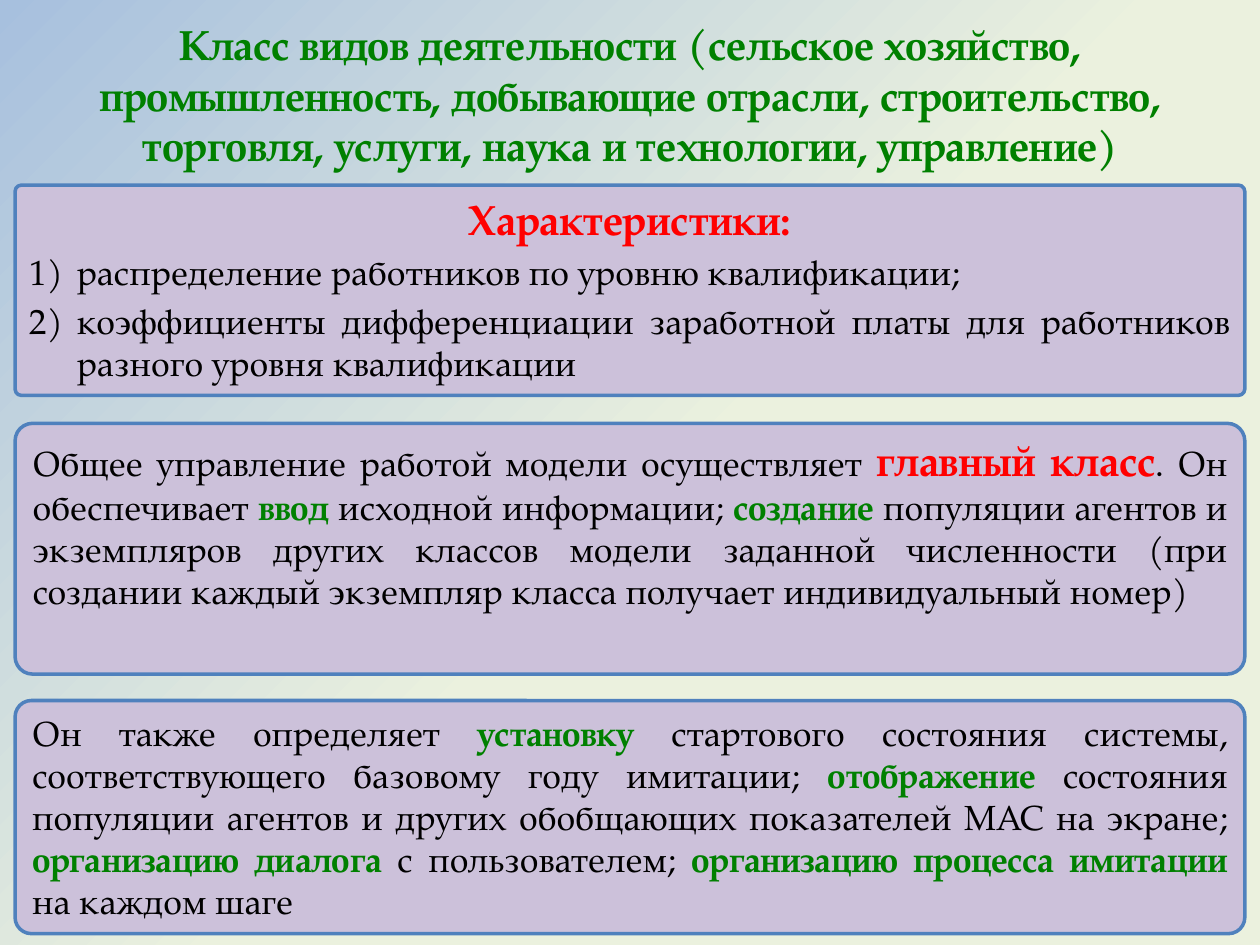
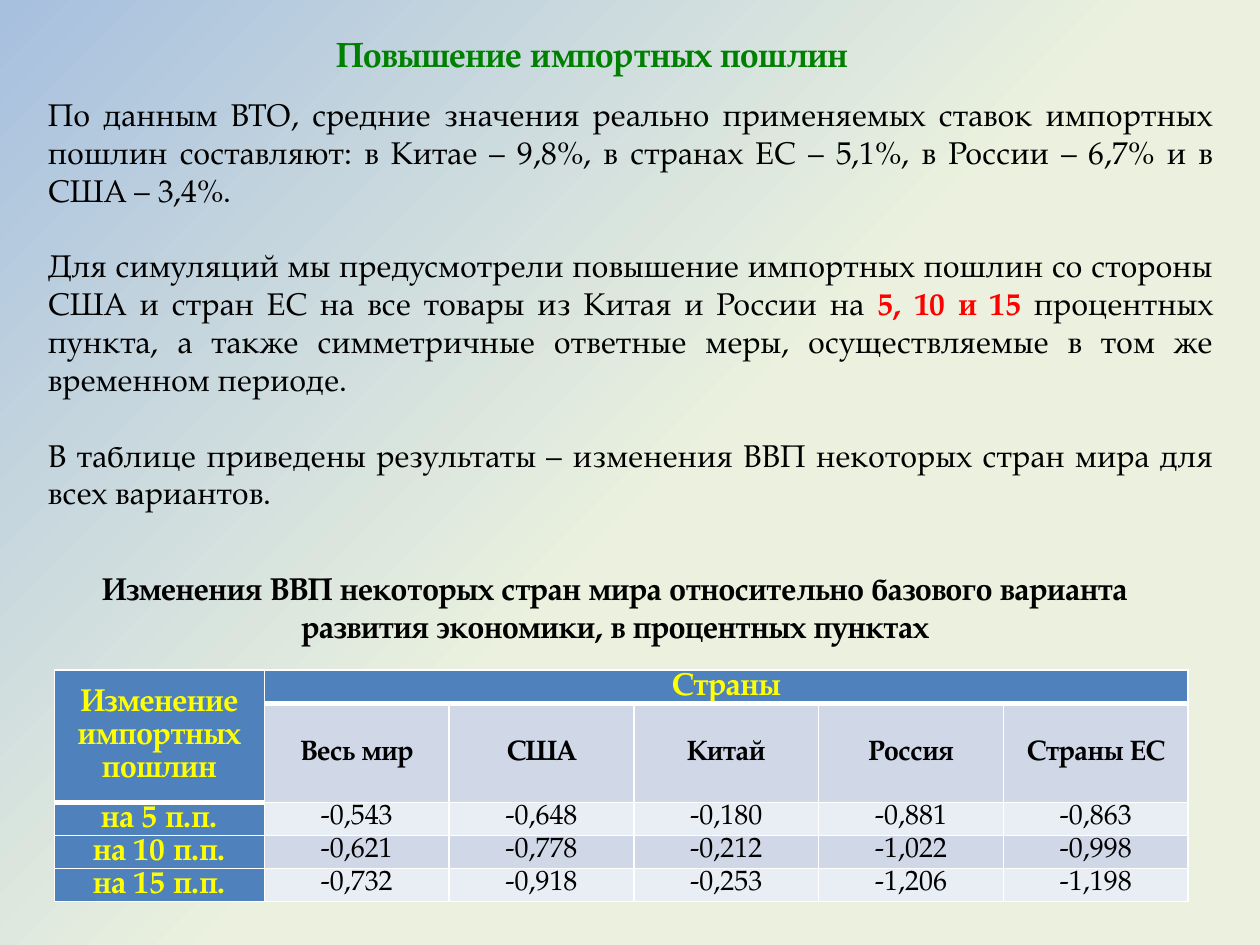
from dataclasses import dataclass
from typing import Optional

from lxml import etree
from pptx import Presentation
from pptx.dml.color import RGBColor
from pptx.enum import shapes, text
from pptx.oxml import ns
from pptx.util import Pt

FONT = "TeX Gyre Pagella"
COLORS = {
    "sky": "A7C0DE", "cream": "EBF1DE",
    "card": "CCC1DA", "blue": "4F81BD",
    "black": "000000", "red": "FF0000", "green": "008000",
    "yellow": "FFFF00", "white": "FFFFFF",
    "band_dark": "D0D8E8", "band_light": "E9EDF4",
}
LEFT, CENTER, JUSTIFY = text.PP_ALIGN.LEFT, text.PP_ALIGN.CENTER, text.PP_ALIGN.JUSTIFY
TOP, MIDDLE = text.MSO_ANCHOR.TOP, text.MSO_ANCHOR.MIDDLE


@dataclass(frozen=True)
class Box:
    left: float
    top: float
    width: float
    height: float


@dataclass(frozen=True)
class Span:
    text: str
    color: str = "black"
    size: float = 20
    bold: bool = False


@dataclass(frozen=True)
class Para:
    spans: list[Span]
    align: text.PP_ALIGN = JUSTIFY
    before: float = 0
    numbered: bool = False
    spacing: Optional[float] = None


def rgb(name: str) -> RGBColor:
    return RGBColor.from_string(COLORS[name])


def key(words: str, color: str = "green", size: float = 20) -> Span:
    return Span(words, color, size, True)


def place(shape, box: Box) -> None:
    shape.left, shape.top = Pt(box.left), Pt(box.top)
    shape.width, shape.height = Pt(box.width), Pt(box.height)


def write(frame, paras: list[Para], anchor=TOP, wrap: bool = True) -> None:
    """Fill a text frame with formatted paragraphs."""
    frame.word_wrap = wrap
    frame.auto_size = text.MSO_AUTO_SIZE.NONE
    frame.vertical_anchor = anchor
    write_paras(frame, paras)


def write_paras(frame, paras: list[Para]) -> None:
    for index, para in enumerate(paras):
        line = frame.paragraphs[0] if index == 0 else frame.add_paragraph()
        props = line._p.get_or_add_pPr()
        props.set("marL", str(Pt(27) if para.numbered else 0))
        props.set("indent", str(Pt(-27) if para.numbered else 0))
        if para.numbered:
            etree.SubElement(props, ns.qn("a:buAutoNum"), type="arabicParenR")
        else:
            etree.SubElement(props, ns.qn("a:buNone"))
        line.alignment = para.align
        line.space_before = Pt(para.before)
        if para.spacing:
            line.line_spacing = para.spacing
        for span in para.spans:
            run = line.add_run()
            run.text = span.text
            run.font.name, run.font.size = FONT, Pt(span.size)
            run.font.bold = span.bold
            run.font.color.rgb = rgb(span.color)


def paint_background(master) -> None:
    fill = master.background.fill
    fill.gradient()
    fill.gradient_angle = 315
    for stop, color, position in zip(fill.gradient_stops, ("sky", "cream"), (0, 0.53)):
        stop.color.rgb = rgb(color)
        stop.position = position
    sky = master.background._cSld.find(".//" + ns.qn("a:srgbClr"))
    etree.SubElement(sky, ns.qn("a:alpha"), val="72000")


def add_titled_slide(prs, title: str, box: Box, size: float, align, wrap: bool):
    slide = prs.slides.add_slide(prs.slide_layouts[1])
    place(slide.shapes.title, box)
    write(slide.shapes.title.text_frame, [Para([key(title, size=size)], align)], wrap=wrap)
    return slide


def style_card(card, paras: list[Para]) -> None:
    card.fill.solid()
    card.fill.fore_color.rgb = rgb("card")
    card.line.color.rgb = rgb("blue")
    card.line.width = Pt(2)
    write(card.text_frame, paras)


def round_corners(placeholder, ratio: float) -> None:
    """Give a placed placeholder a rounded outline."""
    outline = etree.Element(ns.qn("a:prstGeom"), prst="roundRect")
    guides = etree.SubElement(outline, ns.qn("a:avLst"))
    etree.SubElement(guides, ns.qn("a:gd"), name="adj", fmla=f"val {round(ratio * 100000)}")
    placeholder._element.spPr.insert(1, outline)


# Slide 1: classes of the model
CARD_LEFT, CARD_WIDTH = 8.64, 702.72
ACTIVITY_TITLE = ("Класс видов деятельности (сельское хозяйство, промышленность, "
                  "добывающие отрасли, строительство, торговля, услуги, "
                  "наука и технологии, управление)")
FEATURES = [
    Para([key("Характеристики:", "red", 24)], CENTER),
    Para([Span("распределение работников по уровню квалификации;")], before=4, numbered=True),
    Para([Span("коэффициенты дифференциации заработной платы для работников "
               "разного уровня квалификации")], before=4, numbered=True),
]
MAIN_CLASS = [Para([
    Span("Общее управление работой модели осуществляет "),
    key("главный класс", "red", 24),
    Span(". Он обеспечивает "), key("ввод"),
    Span(" исходной информации; "), key("создание"),
    Span(" популяции агентов и экземпляров других классов модели заданной численности "
         "(при создании каждый экземпляр класса получает индивидуальный номер)"),
])]
MAIN_CLASS_TASKS = [Para([
    Span("Он также определяет "), key("установку "),
    Span("стартового состояния системы, соответствующего базовому году имитации; "),
    key("отображение"),
    Span(" состояния популяции агентов и других обобщающих показателей МАС на экране; "),
    key("организацию диалога "), Span("с пользователем; "),
    key("организацию процесса имитации"), Span(" на каждом шаге"),
])]


def build_classes(prs) -> None:
    slide = add_titled_slide(prs, ACTIVITY_TITLE, Box(CARD_LEFT, 7.2, CARD_WIDTH, 94.3),
                             24, CENTER, True)
    features = slide.placeholders[1]
    place(features, Box(CARD_LEFT, 105.8, CARD_WIDTH, 120.2))
    round_corners(features, 0.03)
    style_card(features, FEATURES)
    for top, height, paras in ((241.9, 143.3, MAIN_CLASS), (400.3, 133.2, MAIN_CLASS_TASKS)):
        card = slide.shapes.add_shape(shapes.MSO_SHAPE.ROUNDED_RECTANGLE, Pt(CARD_LEFT),
                                      Pt(top), Pt(CARD_WIDTH), Pt(height))
        card.shadow.inherit = False
        card.adjustments[0] = 0.07
        style_card(card, paras)


# Slide 2: import duties
LINE_GAP = 21.7
DUTIES = [
    Para([Span("По данным ВТО, средние значения реально применяемых ставок импортных пошлин "
               "составляют: в Китае – 9,8%, в странах ЕС – 5,1%, в России – 6,7% "
               "и в США – 3,4%.", size=18)]),
    Para([Span("Для симуляций мы предусмотрели повышение импортных пошлин со стороны США "
               "и стран ЕС на все товары из Китая и России на ", size=18),
          key("5, 10 и 15 ", "red", 18),
          Span("процентных пункта, а также симметричные ответные меры, осуществляемые "
               "в том же временном периоде.", size=18)], before=LINE_GAP),
    Para([Span("В таблице приведены результаты – изменения ВВП некоторых стран мира "
               "для всех вариантов.", size=18)], before=LINE_GAP),
]
TABLE_CAPTION = ("Изменения ВВП некоторых стран мира относительно базового варианта "
                 "развития экономики, в процентных пунктах")
GDP_ROWS = [
    ["Изменение импортных пошлин", "Страны", "", "", "", ""],
    ["", "Весь мир", "США", "Китай", "Россия", "Страны ЕС"],
    ["на 5 п.п.", "-0,543", "-0,648", "-0,180", "-0,881", "-0,863"],
    ["на 10 п.п.", "-0,621", "-0,778", "-0,212", "-1,022", "-0,998"],
    ["на 15 п.п.", "-0,732", "-0,918", "-0,253", "-1,206", "-1,198"],
]
COLUMN_WIDTHS = [120] + [105.6] * 5
ROW_HEIGHTS = [18.9, 56.5, 18.9, 18.9, 18.9]


def set_borders(cell, row: int, column: int) -> None:
    """White edges, thicker beneath the header cells."""
    header_end = 1 if column == 0 else 0
    widths = {"L": 1, "R": 1, "T": 3 if row == header_end + 1 else 1,
              "B": 3 if row == header_end else 1}
    props = cell._tc.get_or_add_tcPr()
    for index, (side, width) in enumerate(widths.items()):
        edge = etree.Element(ns.qn(f"a:ln{side}"), w=str(Pt(width)))
        fill = etree.SubElement(edge, ns.qn("a:solidFill"))
        etree.SubElement(fill, ns.qn("a:srgbClr"), val=COLORS["white"])
        props.insert(index, edge)


def fill_cell(cell, row: int, column: int, label: str) -> None:
    heading = row == 0 or column == 0
    cell.margin_left = cell.margin_right = Pt(5)
    cell.margin_top = cell.margin_bottom = 0
    cell.vertical_anchor = MIDDLE if heading or row == 1 else TOP
    cell.fill.solid()
    band = "band_dark" if row % 2 else "band_light"
    cell.fill.fore_color.rgb = rgb("blue" if heading else band)
    set_borders(cell, row, column)
    if label:
        span = Span(label, "yellow" if heading else "black", 18 if heading else 16,
                    heading or row == 1)
        write_paras(cell.text_frame, [Para([span], CENTER, spacing=1.07)])


def add_gdp_table(slide) -> None:
    table = slide.shapes.add_table(len(ROW_HEIGHTS), len(COLUMN_WIDTHS), Pt(31), Pt(383),
                                   Pt(sum(COLUMN_WIDTHS)), Pt(sum(ROW_HEIGHTS))).table
    for column, width in zip(table.columns, COLUMN_WIDTHS):
        column.width = Pt(width)
    for row, height in zip(table.rows, ROW_HEIGHTS):
        row.height = Pt(height)
    table.cell(0, 0).merge(table.cell(1, 0))
    table.cell(0, 1).merge(table.cell(0, 5))
    for row, labels in enumerate(GDP_ROWS):
        for column, label in enumerate(labels):
            fill_cell(table.cell(row, column), row, column, label)


def build_duties(prs) -> None:
    slide = add_titled_slide(prs, "Повышение импортных пошлин",
                             Box(185, 15.1, 350, 31.7), 20, LEFT, False)
    duties = slide.placeholders[1]
    place(duties, Box(20.2, 49.7, 680.4, 247))
    write(duties.text_frame, DUTIES, MIDDLE)
    caption = slide.shapes.add_textbox(Pt(48.2), Pt(321.1), Pt(607), Pt(51.1))
    write(caption.text_frame, [Para([key(TABLE_CAPTION, "black", 18)], CENTER)], MIDDLE)
    add_gdp_table(slide)


def main() -> None:
    prs = Presentation()
    prs.slide_width, prs.slide_height = Pt(720), Pt(540)
    paint_background(prs.slide_master)
    build_classes(prs)
    build_duties(prs)
    prs.save("out.pptx")


if __name__ == "__main__":
    main()
